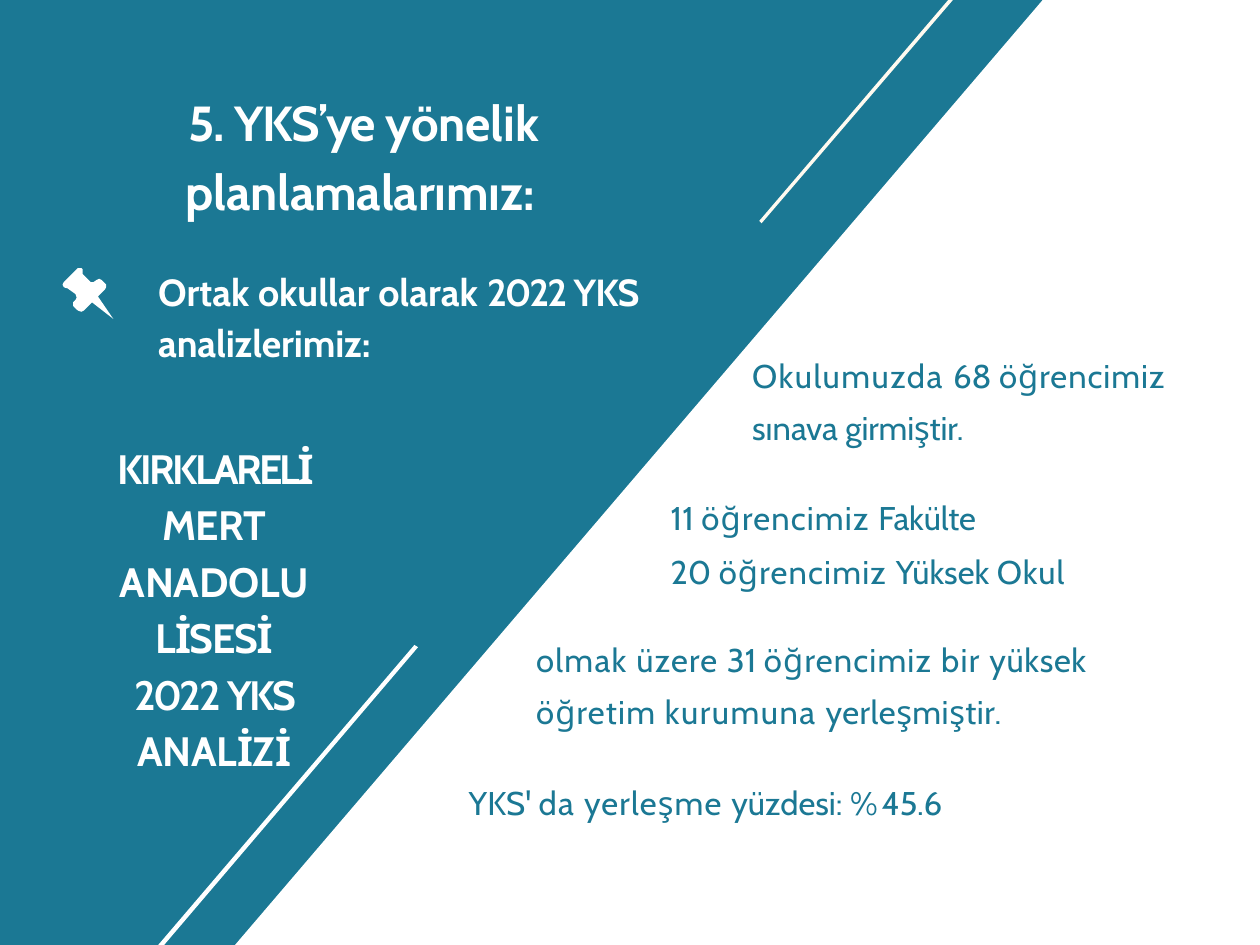
from lxml import etree
from pptx import Presentation
from pptx.dml.color import RGBColor
from pptx.enum import text as t
from pptx.oxml import ns
from pptx.util import Inches, Pt

TEAL = RGBColor(0x1B, 0x78, 0x94)
WHITE = RGBColor(0xFF, 0xFF, 0xFF)
CREAM = RGBColor(0xFF, 0xFA, 0xF0)
WIDE, HIGH = 10.67, 8

BANDS = [
    (WHITE, [(1.99, HIGH), (8.83, 0), (WIDE, 0), (WIDE, HIGH)]),
    (CREAM, [(6.45, 1.89), (6.43, 1.87), (8.03, 0), (8.07, 0)]),
    (WHITE, [(1.34, HIGH), (3.51, 5.46), (3.54, 5.48), (1.39, HIGH)]),
]
PIN = [
    (0.96, 2.7), (0.83, 2.51), (0.89, 2.45), (0.9, 2.43), (0.9, 2.41),
    (0.89, 2.4), (0.86, 2.37), (0.84, 2.36), (0.82, 2.37), (0.79, 2.39),
    (0.77, 2.39), (0.72, 2.34), (0.7, 2.32), (0.7, 2.28), (0.69, 2.27),
    (0.66, 2.27), (0.65, 2.28), (0.54, 2.39), (0.53, 2.41), (0.54, 2.43),
    (0.56, 2.44), (0.57, 2.44), (0.64, 2.49), (0.65, 2.52), (0.64, 2.54),
    (0.62, 2.56), (0.62, 2.59), (0.63, 2.6), (0.66, 2.63), (0.69, 2.64),
    (0.71, 2.63), (0.78, 2.56),
]

TITLE = [[("5. ", -1), ("YKS’ye ", -0.9), ("yönelik planlamalarımız:", -0.1)]]
LIST = [
    [("11 ", 0), ("öğrencimiz ", 0.7), ("Fakülte", -0.1)],
    [("20 ", 0), ("öğrencimiz ", 0.7), ("Yüksek ", 0), ("Okul", 0.6)],
]
HEAD = [[("Ortak okullar olarak ", 0), ("2022 ", -1.3), ("YKS ", -0.6),
         ("analizlerimiz:", -0.1)]]
SCHOOL = [
    [("KIRKLARELİ ", -1.6), ("MERT ", -0.2), ("ANADOLU ", -0.1), ("LİSESİ", -0.8)],
    [("2022 ", -1.5), ("YKS ", -1.4), ("ANALİZİ", -0.1)],
]
EXAM = [[("Okulumuzda ", 0.9), ("68 ", 0), ("öğrencimiz ", 0.6), ("sınava ", 0),
         ("girmiştir.", -0.1)]]
TOTAL = [[("olmak ", 0.8), ("üzere ", 0.7), ("31 ", 0), ("öğrencimiz ", 0.7),
          ("bir ", 0.8), ("yüksek ", 0.4), ("öğretim ", 0.7), ("kurumuna ", 0.9),
          ("yerleşmiştir.", 0.3)]]
RATE = [[("YKS' ", 0), ("da ", 0.8), ("yerleşme ", 0.7), ("yüzdesi: ", 0),
         ("% ", -2), ("45.6", -0.2)]]

BOLD = dict(color=WHITE, bold=True)
BOXES = [
    (HEAD, (1.33, 2.21, 4.77, 0.9), dict(size=23, line=1.14, **BOLD)),
    (EXAM, (6.36, 2.9, 3.57, 0.9), dict(line=1.31)),
    (TOTAL, (4.53, 5.29, 4.89, 0.92), dict(line=1.34)),
    (RATE, (3.96, 6.62, 4.26, 0.36), {}),
    (SCHOOL, (0.81, 3.68, 2, 2.9),
     dict(size=25, line=1.15, align=t.PP_ALIGN.CENTER, before=(1, 0), **BOLD)),
]


def write(shape, paras, at, size=20, color=TEAL, bold=False, line=1.0,
          align=t.PP_ALIGN.LEFT, before=(1,), left=0.01, first=0, top=0.01):
    shape.left, shape.top, shape.width, shape.height = map(Inches, at)
    frame = shape.text_frame
    frame.word_wrap = True
    frame.auto_size = t.MSO_AUTO_SIZE.SHAPE_TO_FIT_TEXT
    frame.vertical_anchor = t.MSO_ANCHOR.TOP
    frame.margin_left = frame.margin_right = frame.margin_bottom = 0
    frame.margin_top = Inches(top)
    for i, runs in enumerate(paras):
        para = frame.add_paragraph() if i else frame.paragraphs[0]
        para.alignment, para.line_spacing = align, line
        para.space_before, para.space_after = Pt(before[i]), Pt(0)
        props = para._p.get_or_add_pPr()
        props.set("marL", str(Inches(left)))
        props.set("indent", str(Inches(first)))
        etree.SubElement(props, ns.qn("a:buNone"))
        for words, gap in runs:
            run = para.add_run()
            run.text = words
            font = run.font
            font.name, font.size, font.bold = "Cabin", Pt(size), bold
            font.color.rgb = color
            run._r.get_or_add_rPr().set("spc", str(round(gap * 100)))


def draw(slide, color, points):
    start, *rest = [(Inches(x), Inches(y)) for x, y in points]
    pen = slide.shapes.build_freeform(*start)
    pen.add_line_segments(rest, close=True)
    shape = pen.convert_to_shape()
    shape.shadow.inherit = False
    shape.fill.solid()
    shape.fill.fore_color.rgb = color
    shape.line.fill.background()


def main():
    deck = Presentation()
    deck.slide_width, deck.slide_height = Inches(WIDE), Inches(HIGH)
    slide = deck.slides.add_slide(deck.slide_layouts[1])
    slide.background.fill.solid()
    slide.background.fill.fore_color.rgb = TEAL
    title, body = slide.placeholders
    for color, points in BANDS + [(WHITE, PIN)]:
        draw(slide, color, points)
    for holder in (title, body):
        slide.shapes._spTree.append(holder._element)
    write(title, TITLE, (1.56, 0.69, 3.54, 1.19), size=30, line=1.17,
          before=(0.9,), first=0.03, **BOLD)
    write(body, LIST, (5.67, 4.07, 3.49, 0.94), before=(10, 9), top=0.14)
    for paras, at, style in BOXES:
        write(slide.shapes.add_textbox(0, 0, 0, 0), paras, at, **style)
    deck.save("out.pptx")


if __name__ == "__main__":
    main()
